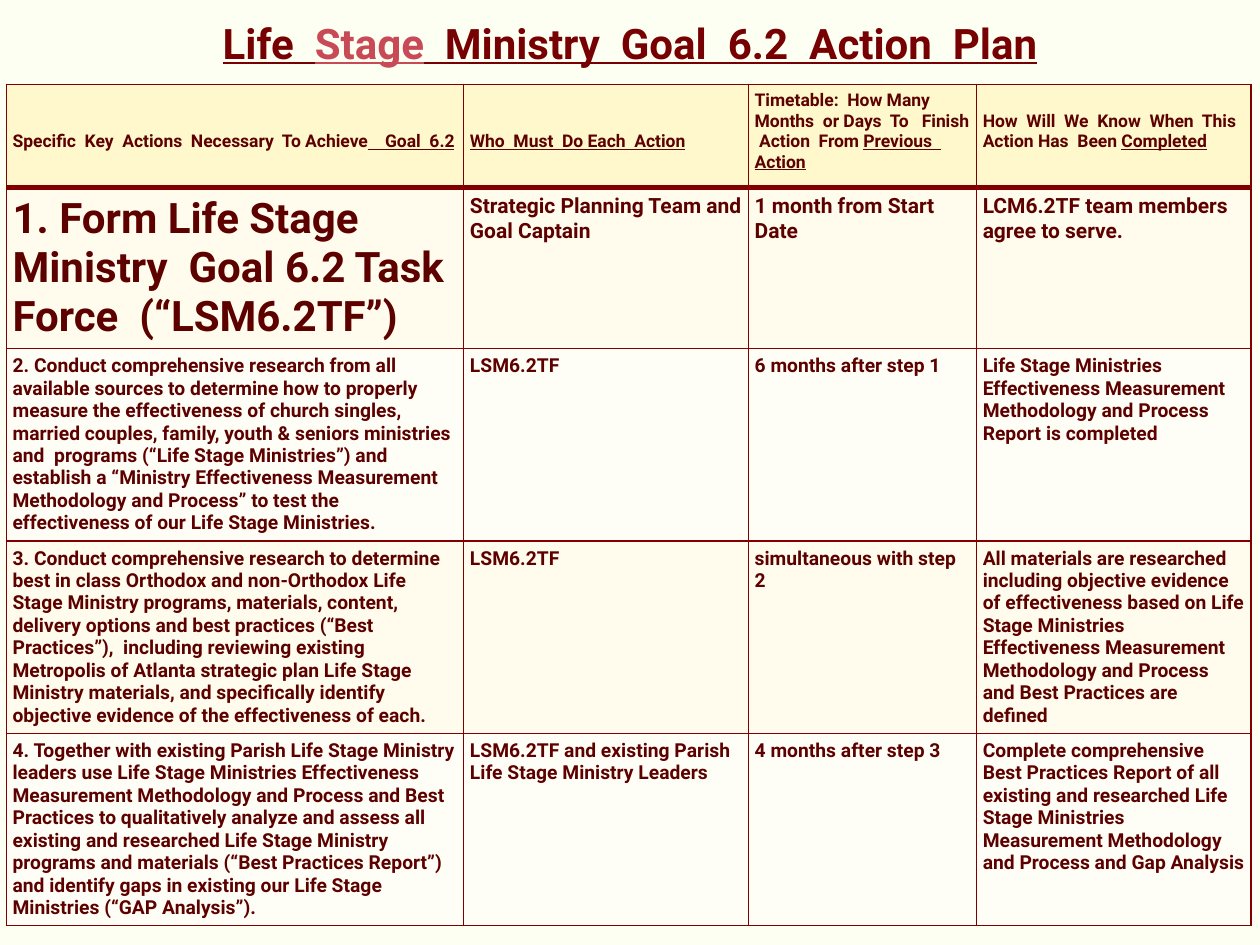
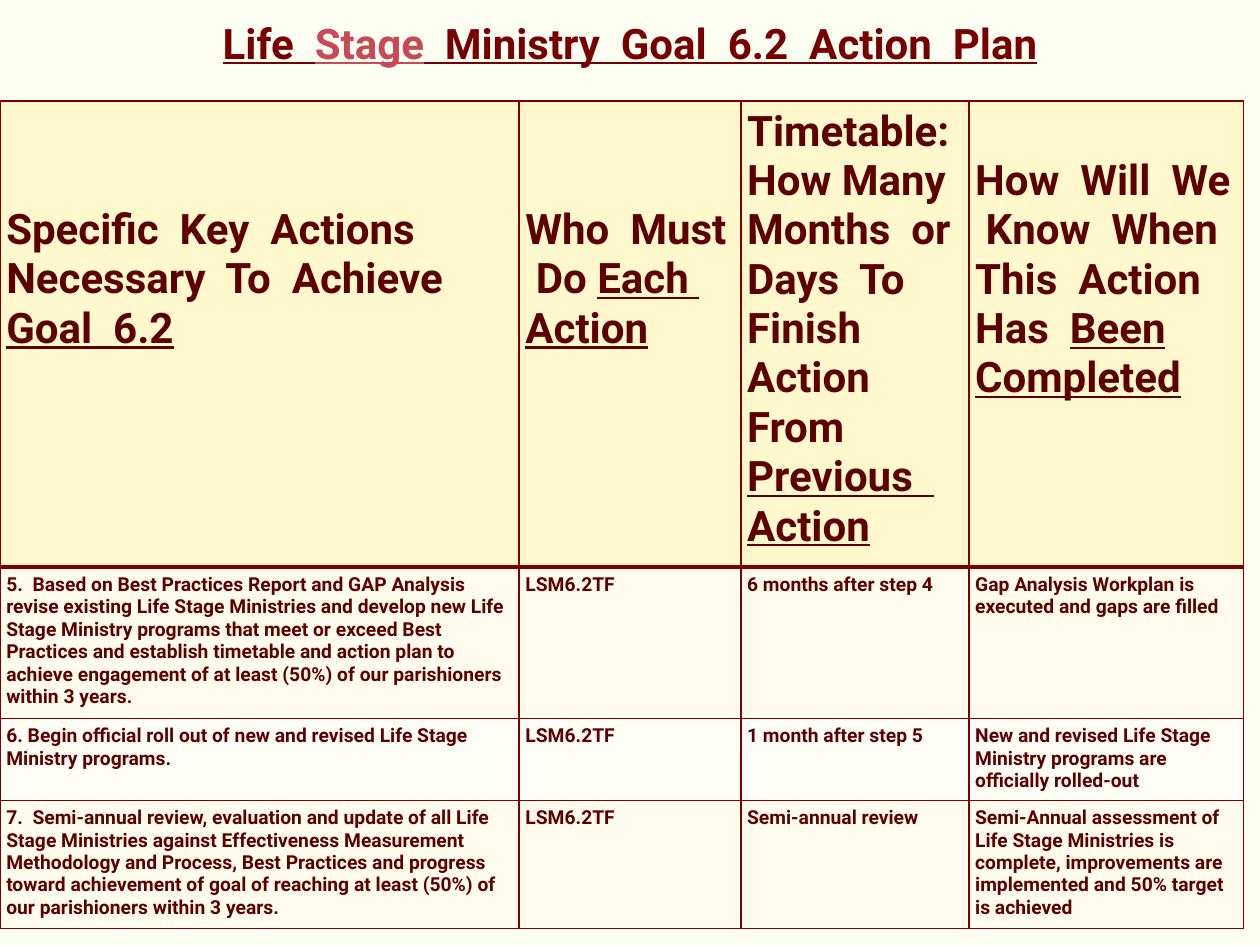
import pptx
import pptx.util
import pptx.dml.color
import pptx.enum.text
import pptx.oxml
import pptx.oxml.ns

Inches, Pt = pptx.util.Inches, pptx.util.Pt
RGBColor = pptx.dml.color.RGBColor

# Shared look
FONT = "Roboto"
PAGE = RGBColor(0xFE, 0xFF, 0xF3)
TITLE = RGBColor(0x76, 0x00, 0x02)
ACCENT = RGBColor(0xC8, 0x4A, 0x56)
TEXT = RGBColor(0x5D, 0x01, 0x00)
BORDER = RGBColor(0x80, 0x00, 0x00)
HEADER_FILL = RGBColor(0xFF, 0xF8, 0xCD)
BAND_FILLS = (RGBColor(0xFF, 0xFE, 0xF6), RGBColor(0xFF, 0xFC, 0xED))
INSET = 0.05
LINE_HEIGHT = 1.172 / 72  # inches of line height per point of type

TITLE_RUNS = [
    ("Life  ", {}),
    ("Stage", {"color": ACCENT}),
    ("  Ministry  Goal  6.2", {}),
    ("  ", {"bold": False}),
    ("Action  Plan", {}),
]

# Each header: plain text, underlined text, number of lines it is lowered by
TIMETABLE = ("Timetable:  How Many  Months  or Days  To   Finish  Action  From ",
             "Previous   Action", 0)

START_PLAN = {
    "left": 0.05, "top": 0.67, "header_size": 10,
    "columns": [3.63, 2.26, 1.81, 2.18],
    "heights": [0.82, 1.27, 1.52, 1.52, 1.52],
    "sizes": {(1, 0): 24, (1, 1): 12, (1, 2): 12, (1, 3): 12},
    "headers": [
        ("Specific  Key  Actions  Necessary  To Achieve", "    Goal  6.2", 2),
        ("", "Who  Must  Do Each  Action", 2),
        TIMETABLE,
        ("How  Will  We  Know  When  This  Action Has  Been ", "Completed", 1),
    ],
    "steps": [
        ("1. Form Life Stage Ministry  Goal 6.2 Task Force  (“LSM6.2TF”)",
         "Strategic Planning Team and Goal Captain",
         "1 month from Start Date",
         "LCM6.2TF team members agree to serve."),
        ("2. Conduct comprehensive research from all available sources to "
         "determine how to properly measure the effectiveness of church "
         "singles, married couples, family, youth & seniors ministries and  "
         "programs (“Life Stage Ministries”) and establish a “Ministry "
         "Effectiveness Measurement Methodology and Process” to test the "
         "effectiveness of our Life Stage Ministries.",
         "LSM6.2TF",
         "6 months after step 1",
         "Life Stage Ministries Effectiveness Measurement Methodology and "
         "Process Report is completed"),
        ("3. Conduct comprehensive research to determine best in class "
         "Orthodox and non-Orthodox Life Stage Ministry programs, materials, "
         "content, delivery options and best practices (“Best Practices”),  "
         "including reviewing existing Metropolis of Atlanta strategic plan "
         "Life Stage Ministry materials, and specifically identify objective "
         "evidence of the effectiveness of each.",
         "LSM6.2TF",
         "simultaneous with step 2",
         "All materials are researched including objective evidence of "
         "effectiveness based on Life Stage Ministries Effectiveness "
         "Measurement Methodology and Process and Best Practices are defined"),
        ("4. Together with existing Parish Life Stage Ministry leaders use "
         "Life Stage Ministries Effectiveness Measurement Methodology and "
         "Process and Best Practices to qualitatively analyze and assess all "
         "existing and researched Life Stage Ministry programs and materials "
         "(“Best Practices Report”) and identify gaps in existing our Life "
         "Stage Ministries (“GAP Analysis”).",
         "LSM6.2TF and existing Parish Life Stage Ministry Leaders",
         "4 months after step 3",
         "Complete comprehensive Best Practices Report of all existing and "
         "researched Life Stage Ministries Measurement Methodology and "
         "Process and Gap Analysis"),
    ],
}

ROLLOUT_PLAN = {
    "left": 0, "top": 0.8, "header_size": 24,
    "columns": [4.12, 1.76, 1.81, 2.18],
    "heights": [3.62, 1.17, 0.63, 0.99],
    "sizes": {},
    "headers": [
        ("Specific  Key  Actions  Necessary  To  Achieve ", "Goal  6.2", 2),
        ("Who  Must  Do ", "Each  Action", 2),
        TIMETABLE,
        ("How  Will  We  Know  When  This  Action Has  ", "Been Completed", 1),
    ],
    "steps": [
        ("5.  Based on Best Practices Report and GAP Analysis revise existing "
         "Life Stage Ministries and develop new Life Stage Ministry programs "
         "that meet or exceed Best Practices and establish timetable and "
         "action plan to achieve engagement of at least (50%) of our "
         "parishioners within 3 years.",
         "LSM6.2TF",
         "6 months after step 4",
         "Gap Analysis Workplan is executed and gaps are filled"),
        ("6. Begin official roll out of new and revised Life Stage Ministry "
         "programs.",
         "LSM6.2TF",
         "1 month after step 5",
         "New and revised Life Stage Ministry programs are officially "
         "rolled-out"),
        ("7.  Semi-annual review, evaluation and update of all Life Stage "
         "Ministries against Effectiveness Measurement Methodology and "
         "Process, Best Practices and progress toward achievement of goal of "
         "reaching at least (50%) of our parishioners within 3 years.",
         "LSM6.2TF",
         "Semi-annual review",
         "Semi-Annual assessment of Life Stage Ministries is complete, "
         "improvements are implemented and 50% target is achieved"),
    ],
}


def add_run(p, text, size, color=TEXT, **formats):
    r = p.add_run()
    r.text = text
    values = {"name": FONT, "size": Pt(size), "bold": True} | formats
    for name, value in values.items():
        setattr(r.font, name, value)
    r.font.color.rgb = color


def set_insets(box, **changes):
    sides = dict.fromkeys(("left", "right", "top", "bottom"), INSET) | changes
    for side, value in sides.items():
        setattr(box, f"margin_{side}", Inches(value))


def set_borders(cell, top, bottom):
    """Draw the four cell borders; top and bottom widths are in points."""
    tcPr = cell._tc.get_or_add_tcPr()
    widths = {"lnL": 1, "lnR": 1, "lnT": top, "lnB": bottom}
    for i, (tag, width) in enumerate(widths.items()):
        tcPr.insert(i, pptx.oxml.parse_xml(
            f'<a:{tag} {pptx.oxml.ns.nsdecls("a")} w="{Pt(width)}">'
            f'<a:solidFill><a:srgbClr val="{BORDER}"/></a:solidFill>'
            f'</a:{tag}>'))


def fill_cell(cell, fill, runs, size, lowered=0, top=1, bottom=1):
    cell.fill.solid()
    cell.fill.fore_color.rgb = fill
    set_borders(cell, top, bottom)
    set_insets(cell, top=INSET + lowered * size * LINE_HEIGHT)
    p = cell.text_frame.paragraphs[0]
    for text, underline in runs:
        if text:
            add_run(p, text, size, underline=underline)


def add_title(s):
    sp = s.shapes.add_textbox(Inches(0.66), Inches(-0.24),
                              Inches(8.68), Inches(1.25))
    tf = sp.text_frame
    tf.word_wrap = True
    tf.vertical_anchor = pptx.enum.text.MSO_ANCHOR.MIDDLE
    set_insets(tf)
    p = tf.paragraphs[0]
    p.alignment = pptx.enum.text.PP_ALIGN.CENTER
    p.line_spacing = 0.7
    for text, formats in TITLE_RUNS:
        add_run(p, text, 24, **({"color": TITLE, "underline": True} | formats))


def add_plan_table(s, plan):
    columns, heights = plan["columns"], plan["heights"]
    table = s.shapes.add_table(
        len(heights), len(columns), Inches(plan["left"]), Inches(plan["top"]),
        Inches(sum(columns)), Inches(sum(heights))).table
    for column, width in zip(table.columns, columns):
        column.width = Inches(width)
    for row, height in zip(table.rows, heights):
        row.height = Inches(height)

    # Header row, closed by a heavy rule
    for j, (plain, underlined, lowered) in enumerate(plan["headers"]):
        fill_cell(table.cell(0, j), HEADER_FILL,
                  [(plain, False), (underlined, True)],
                  plan["header_size"], lowered, bottom=3)

    # Action steps in alternating bands
    for i, step in enumerate(plan["steps"], start=1):
        for j, text in enumerate(step):
            fill_cell(table.cell(i, j), BAND_FILLS[i % 2], [(text, False)],
                      plan["sizes"].get((i, j), 11), top=3 if i == 1 else 1)


def add_plan_slide(prs, plan):
    s = prs.slides.add_slide(prs.slide_layouts[6])
    s.background.fill.solid()
    s.background.fill.fore_color.rgb = PAGE
    add_plan_table(s, plan)
    add_title(s)


def main():
    prs = pptx.Presentation()
    prs.slide_width, prs.slide_height = Inches(10), Inches(7.5)
    for plan in (START_PLAN, ROLLOUT_PLAN):
        add_plan_slide(prs, plan)
    prs.save("out.pptx")


if __name__ == "__main__":
    main()
